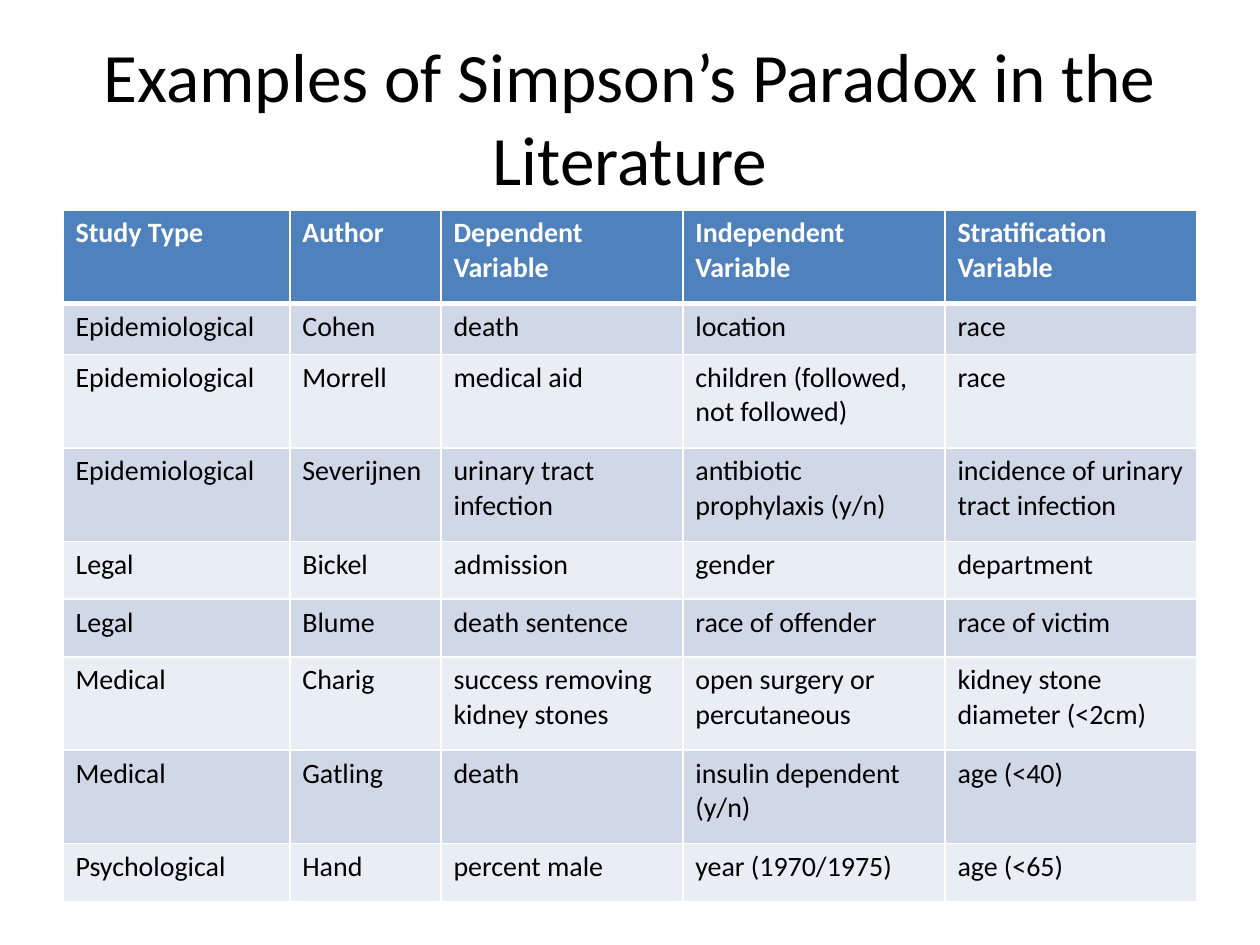
"""Build a slide with a table of published cases of Simpson's paradox."""
from dataclasses import dataclass
from typing import NamedTuple

from lxml.etree import SubElement
from pptx import Presentation
from pptx.dml.color import RGBColor
from pptx.enum.text import MSO_ANCHOR, PP_ALIGN
from pptx.oxml.ns import qn
from pptx.slide import Slide
from pptx.table import _Cell
from pptx.text.text import TextFrame
from pptx.util import Pt


@dataclass(frozen=True)
class Theme:
    font: str = "Calibri"
    title: float = 39.6
    body: float = 16
    ink: str = "000000"
    white: str = "FFFFFF"
    head: str = "4F81BD"
    bands: tuple[str, str] = ("D0D8E8", "E9EDF4")
    thin: float = 1
    thick: float = 3


class Study(NamedTuple):
    kind: str
    author: str
    outcome: str
    factor: str
    strata: str


class Look(NamedTuple):
    fill: str
    ink: str
    bold: bool
    top: float
    bottom: float


THEME = Theme()
TITLE = "Examples of Simpson’s Paradox in the Literature"
HEAD = Study("Study Type", "Author", "Dependent Variable",
             "Independent Variable", "Stratification Variable")
STUDIES = [
    Study("Epidemiological", "Cohen", "death", "location", "race"),
    Study("Epidemiological", "Morrell", "medical aid",
          "children (followed, not followed)", "race"),
    Study("Epidemiological", "Severijnen", "urinary tract infection",
          "antibiotic prophylaxis (y/n)", "incidence of urinary tract infection"),
    Study("Legal", "Bickel", "admission", "gender", "department"),
    Study("Legal", "Blume", "death sentence", "race of offender", "race of victim"),
    Study("Medical", "Charig", "success removing kidney stones",
          "open surgery or percutaneous", "kidney stone diameter (<2cm)"),
    Study("Medical", "Gatling", "death", "insulin dependent (y/n)", "age (<40)"),
    Study("Psychological", "Hand", "percent male", "year (1970/1975)", "age (<65)"),
]
WIDTHS = (129.6, 86.4, 138.2, 149.8, 144)
TALL, SHORT, FIRST = 53.4, 33, 29.2
HEIGHTS = (TALL, FIRST, TALL, TALL, SHORT, SHORT, TALL, TALL, SHORT)


def write(frame: TextFrame, text: str, size: float, ink: str, bold: bool = False) -> None:
    """Fill a text frame with one formatted paragraph."""
    frame.text = text
    font = frame.paragraphs[0].runs[0].font
    font.name, font.size, font.bold = THEME.font, Pt(size), bold
    font.color.rgb = RGBColor.from_string(ink)


def edge(cell: _Cell, side: str, width: float) -> None:
    """Add a white border to one side of a cell."""
    line = SubElement(cell._tc.get_or_add_tcPr(), qn(f"a:ln{side}"), w=str(Pt(width)))
    fill = SubElement(line, qn("a:solidFill"))
    SubElement(fill, qn("a:srgbClr"), val=THEME.white)


def style(cell: _Cell, text: str, look: Look) -> None:
    """Write a cell and set its borders and fill."""
    write(cell.text_frame, text, THEME.body, look.ink, look.bold)
    widths = {"L": THEME.thin, "R": THEME.thin, "T": look.top, "B": look.bottom}
    for side, width in widths.items():
        edge(cell, side, width)
    cell.fill.solid()
    cell.fill.fore_color.rgb = RGBColor.from_string(look.fill)


def choose(row: int) -> Look:
    """Return the look of a table row."""
    if row == 0:
        return Look(THEME.head, THEME.white, True, THEME.thin, THEME.thick)
    top = THEME.thick if row == 1 else THEME.thin
    return Look(THEME.bands[(row - 1) % 2], THEME.ink, False, top, THEME.thin)


def add_title(slide: Slide) -> None:
    """Add the centred slide title."""
    frame = slide.shapes.add_textbox(Pt(36), Pt(21.6), Pt(648), Pt(90)).text_frame
    frame.word_wrap = True
    frame.vertical_anchor = MSO_ANCHOR.MIDDLE
    write(frame, TITLE, THEME.title, THEME.ink)
    frame.paragraphs[0].alignment = PP_ALIGN.CENTER


def add_grid(slide: Slide) -> None:
    """Add the table of studies."""
    rows = [HEAD, *STUDIES]
    table = slide.shapes.add_table(
        len(rows), len(WIDTHS), Pt(36), Pt(120), Pt(sum(WIDTHS)), Pt(sum(HEIGHTS))
    ).table
    for column, width in zip(table.columns, WIDTHS):
        column.width = Pt(width)
    for index, (row, study) in enumerate(zip(table.rows, rows)):
        row.height = Pt(HEIGHTS[index])
        for cell, text in zip(row.cells, study):
            style(cell, text, choose(index))


def main() -> None:
    """Build and save the slide."""
    deck = Presentation()
    deck.slide_width, deck.slide_height = Pt(720), Pt(540)
    slide = deck.slides.add_slide(deck.slide_layouts[6])
    add_title(slide)
    add_grid(slide)
    deck.save("out.pptx")


if __name__ == "__main__":
    main()
